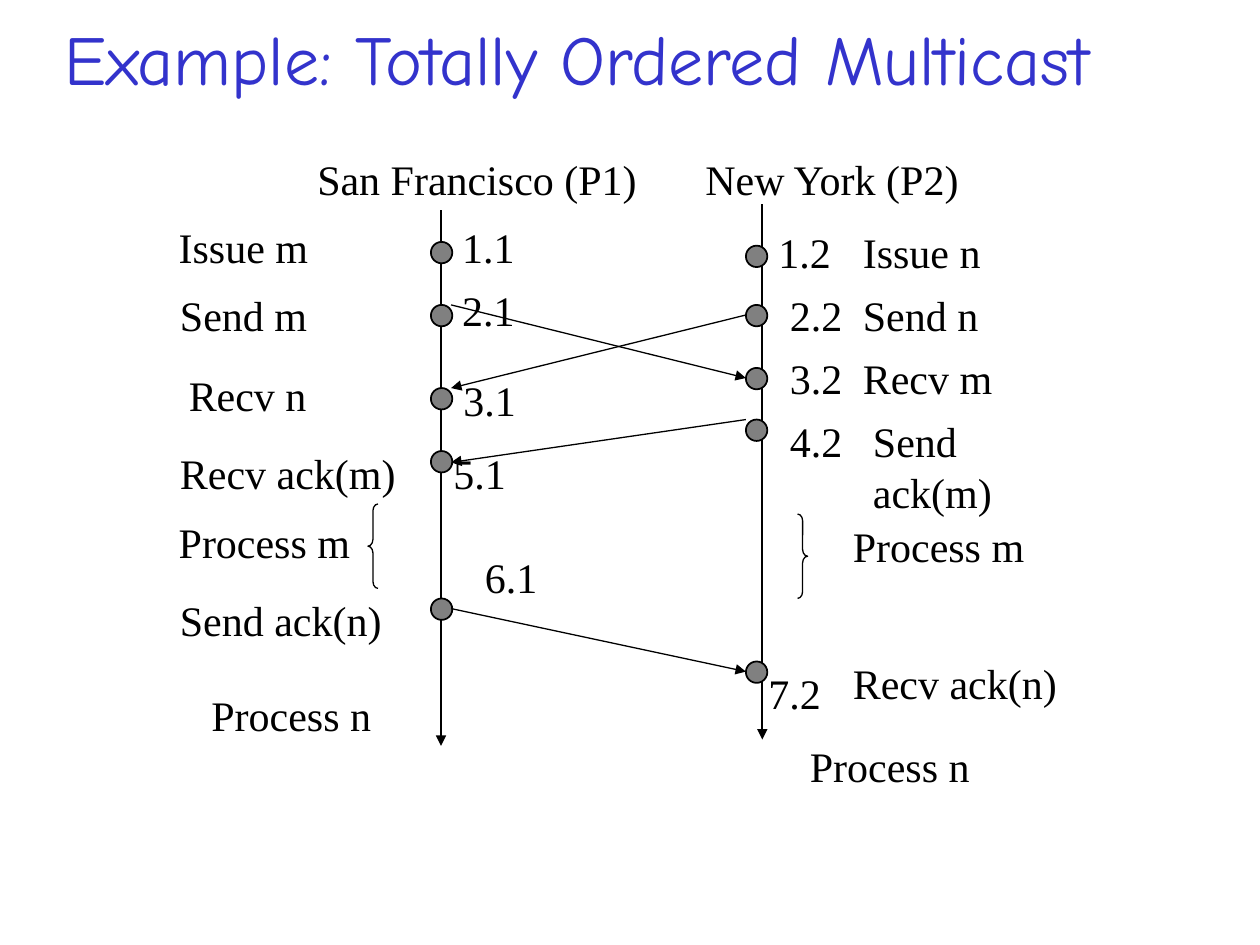
from lxml.etree import SubElement
from pptx import Presentation
from pptx.dml.color import RGBColor
from pptx.enum.shapes import MSO_CONNECTOR as Link, MSO_SHAPE as Shape
from pptx.enum.text import MSO_ANCHOR as Anchor, MSO_AUTO_SIZE as Fit, PP_ALIGN as Align
from pptx.oxml.ns import qn
from pptx.util import Inches, Pt

HUES = {"title": "3333CC", "ink": "000000", "dot": "808080"}
SERIF = "Times New Roman"
WEST, EAST = 3.58, 5.92
DOT = 0.17

AXES = [(3.5, 1.67), (6.05, 1.62)]
DOTS = {
    3.42: [1.92, 2.42, 3.08, 3.58, 4.75],
    5.92: [1.95, 2.42, 2.92, 3.33, 5.25],
}
SENDS = [
    (EAST, 2.5, WEST, 3.08),
    (WEST, 2.42, EAST, 3),
    (EAST, 3.33, WEST, 3.67),
    (WEST, 4.83, EAST, 5.33),
]
BRACES = [(Shape.LEFT_BRACE, 2.92, 4), (Shape.RIGHT_BRACE, 6.33, 4.08)]
CLOCKS = [
    ("1.1", 3.57, 1.71), ("2.1", 3.57, 2.21), ("3.1", 3.58, 2.92),
    ("5.1", 3.5, 3.5), ("6.1", 3.75, 4.33),
    ("1.2", 6.08, 1.75), ("2.2", 6.17, 2.25), ("3.2", 6.17, 2.75),
    ("4.2", 6.17, 3.25), ("7.2", 6, 5.25),
]
LABELS = [
    ("San Francisco (P1)", 2.42, 1.17, 2.74),
    ("New York (P2)", 5.5, 1.17, 2.26),
    ("Issue m", 1.32, 1.71, 1.23),
    ("Send m", 1.33, 2.25, 1.21),
    ("Recv n", 1.4, 2.88, 1.14),
    ("Recv ack(m)", 1.33, 3.5, 1.91),
    ("Process m", 1.32, 4.05, 1.56),
    ("Send ack(n)", 1.33, 4.67, 1.8),
    ("Process n", 1.58, 5.42, 1.47),
    ("Issue n", 6.75, 1.75, 1.14),
    ("Send n", 6.75, 2.25, 1.12),
    ("Recv m", 6.75, 2.75, 1.23),
    ("Send ack(m)", 6.83, 3.25, 1.89),
    ("Process m", 6.67, 4.08, 1.65),
    ("Recv ack(n)", 6.67, 5.17, 1.82),
    ("Process n", 6.33, 5.83, 1.47),
]


def hue(name):
    """Return a named colour."""
    return RGBColor.from_string(HUES[name])


def add_run(para, text, font, size, tint):
    """Add one styled run."""
    run = para.add_run()
    run.text = text
    run.font.name = font
    run.font.size = Pt(size)
    run.font.color.rgb = hue(tint)


def set_title(slide, text):
    """Place and fill the title."""
    title = slide.shapes.title
    title.left, title.top = Inches(0.33), Inches(0)
    title.width, title.height = Inches(8.5), Inches(0.92)
    frame = title.text_frame
    frame.vertical_anchor = Anchor.MIDDLE
    para = frame.paragraphs[0]
    para.alignment = Align.CENTER
    add_run(para, text, "Comic Neue", 40, "title")


def add_label(slide, text, left, top, width=0.62):
    """Add a one-line label."""
    box = slide.shapes.add_textbox(Inches(left), Inches(top), Inches(width), Inches(0.5))
    frame = box.text_frame
    frame.word_wrap = False
    frame.auto_size = Fit.SHAPE_TO_FIT_TEXT
    add_run(frame.paragraphs[0], text, SERIF, 24, "ink")


def add_arrow(slide, x1, y1, x2, y2, weight=0.75):
    """Add a straight arrow."""
    line = slide.shapes.add_connector(
        Link.STRAIGHT, Inches(x1), Inches(y1), Inches(x2), Inches(y2))
    line.line.color.rgb = hue("ink")
    line.line.width = Pt(weight)
    SubElement(line.line._get_or_add_ln(), qn("a:tailEnd"), type="triangle")
    SubElement(line._element.spPr, qn("a:effectLst"))


def add_dot(slide, left, top):
    """Add an event dot."""
    dot = slide.shapes.add_shape(
        Shape.OVAL, Inches(left), Inches(top), Inches(DOT), Inches(DOT))
    dot.shadow.inherit = False
    dot.fill.solid()
    dot.fill.fore_color.rgb = hue("dot")
    dot.line.color.rgb = hue("ink")
    dot.line.width = Pt(1)


def add_brace(slide, kind, left, top):
    """Add a curly brace."""
    brace = slide.shapes.add_shape(
        kind, Inches(left), Inches(top), Inches(0.08), Inches(0.67))
    brace.shadow.inherit = False
    brace.adjustments[0] = 0.67
    brace.fill.background()
    brace.line.color.rgb = hue("ink")
    brace.line.width = Pt(0.75)


def main():
    """Build the slide."""
    deck = Presentation()
    deck.slide_width, deck.slide_height = Inches(10), Inches(7.5)
    slide = deck.slides.add_slide(deck.slide_layouts[5])
    set_title(slide, "Example: Totally Ordered Multicast")
    for x, top in AXES:
        add_arrow(slide, x, top, x, top + 4.25, 1)
    for left, tops in DOTS.items():
        for top in tops:
            add_dot(slide, left, top)
    for label in CLOCKS + LABELS:
        add_label(slide, *label)
    for send in SENDS:
        add_arrow(slide, *send)
    for brace in BRACES:
        add_brace(slide, *brace)
    deck.save("out.pptx")


if __name__ == "__main__":
    main()
